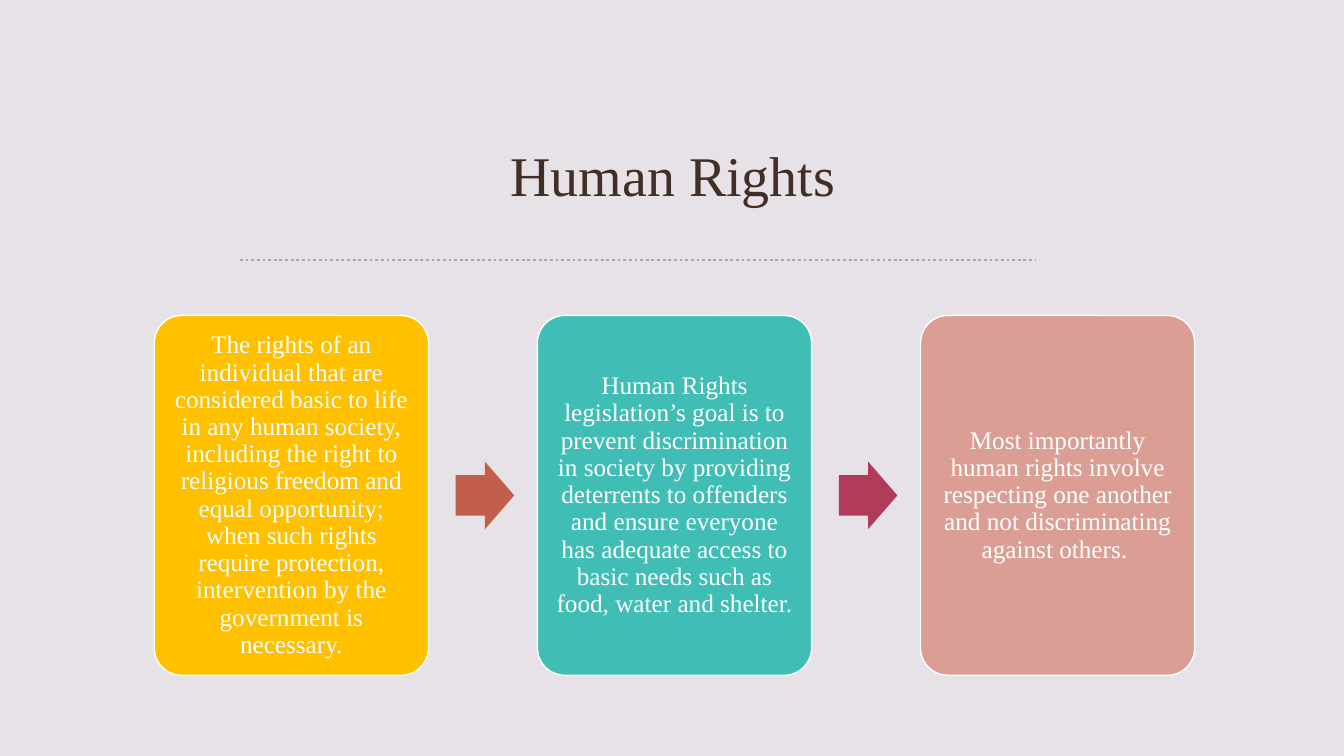
import pptx
import pptx.dml.color
import pptx.enum.dml
import pptx.enum.shapes
import pptx.enum.text
import pptx.oxml
import pptx.oxml.ns
import pptx.util
from pptx.util import Inches

COLORS = {
    "background": "E7E2E8",
    "title": "412E24",
    "divider": "B2A2B5",
    "white": "FFFFFF",
    "gold": "FFC000",
    "teal": "40BEB6",
    "rose": "DB9E94",
    "rust": "C35E4D",
    "crimson": "B13B5B",
}

STEPS = [
    ("The rights of an individual that are considered basic to life in any human society, "
     "including the right to religious freedom and equal opportunity; when such rights require "
     "protection, intervention by the government is necessary.", "gold", "rust"),
    ("Human Rights legislation’s goal is to prevent discrimination in society by providing "
     "deterrents to offenders and ensure everyone has adequate access to basic needs such as "
     "food, water and shelter.", "teal", "crimson"),
    ("Most importantly human rights involve respecting one another and not discriminating "
     "against others. ", "rose", None),
]


def color(name):
    return pptx.dml.color.RGBColor.from_string(COLORS[name])


def write_text(shape, text, size, color_name, line_spacing=1.0, inset=0.1):
    frame = shape.text_frame
    frame.word_wrap = True
    frame.auto_size = pptx.enum.text.MSO_AUTO_SIZE.NONE
    frame.vertical_anchor = pptx.enum.text.MSO_ANCHOR.MIDDLE
    frame.margin_left = frame.margin_right = Inches(inset)
    frame.margin_top = frame.margin_bottom = Inches(inset)
    paragraph = frame.paragraphs[0]
    paragraph.alignment = pptx.enum.text.PP_ALIGN.CENTER
    paragraph.line_spacing = line_spacing
    run = paragraph.add_run()
    run.text = text
    run.font.name = "Times New Roman"
    run.font.size = pptx.util.Pt(size)
    run.font.color.rgb = color(color_name)


def add_filled_shape(slide, kind, left, top, width, height, fill):
    shape = slide.shapes.add_shape(
        kind, Inches(left), Inches(top), Inches(width), Inches(height))
    shape.shadow.inherit = False
    shape.fill.solid()
    shape.fill.fore_color.rgb = color(fill)
    shape.line.fill.background()
    return shape


def add_heading(slide, left, top, width, height):
    title = slide.shapes.title
    title.left, title.top = Inches(left), Inches(top)
    title.width, title.height = Inches(width), Inches(height)
    write_text(title, "Human Rights", size=40, color_name="title")

    line_left = left + 1.33
    line_top = top + height + 0.15
    divider = slide.shapes.add_connector(
        pptx.enum.shapes.MSO_CONNECTOR.STRAIGHT,
        Inches(line_left), Inches(line_top), Inches(line_left + 7.89), Inches(line_top))
    divider.line.color.rgb = color("divider")
    divider.line.width = pptx.util.Pt(2)
    divider.line.dash_style = pptx.enum.dml.MSO_LINE.ROUND_DOT
    properties = divider._element.find(pptx.oxml.ns.qn("p:spPr"))
    properties.append(pptx.oxml.parse_xml(
        f'<a:effectLst {pptx.oxml.ns.nsdecls("a")}/>'))


def add_process(slide, left, top, width, height):
    card_width = 2.72
    arrow_width, arrow_height = 0.58, 0.67
    pitch = (width - card_width) / (len(STEPS) - 1)
    kinds = pptx.enum.shapes.MSO_SHAPE
    for index, (text, fill, arrow_fill) in enumerate(STEPS):
        card_left = left + index * pitch
        card = add_filled_shape(
            slide, kinds.ROUNDED_RECTANGLE, card_left, top, card_width, height, fill)
        card.adjustments[0] = 0.1
        card.line.color.rgb = color("white")
        card.line.width = pptx.util.Pt(1)
        write_text(card, text, size=18, color_name="white", line_spacing=0.9, inset=0.07)
        if arrow_fill:
            arrow = add_filled_shape(
                slide, kinds.RIGHT_ARROW, card_left + card_width + 0.27,
                top + (height - arrow_height) / 2, arrow_width, arrow_height, arrow_fill)
            arrow.adjustments[0] = 0.6
            arrow.adjustments[1] = 0.5


def main():
    presentation = pptx.Presentation()
    presentation.slide_width = Inches(13.33)
    presentation.slide_height = Inches(7.5)
    slide = presentation.slides.add_slide(presentation.slide_layouts[5])
    slide.background.fill.solid()
    slide.background.fill.fore_color.rgb = color("background")
    add_heading(slide, 1.05, 1.03, 11.25, 1.4)
    add_process(slide, 1.53, 3.13, 10.32, 3.57)
    presentation.save("out.pptx")


if __name__ == "__main__":
    main()
